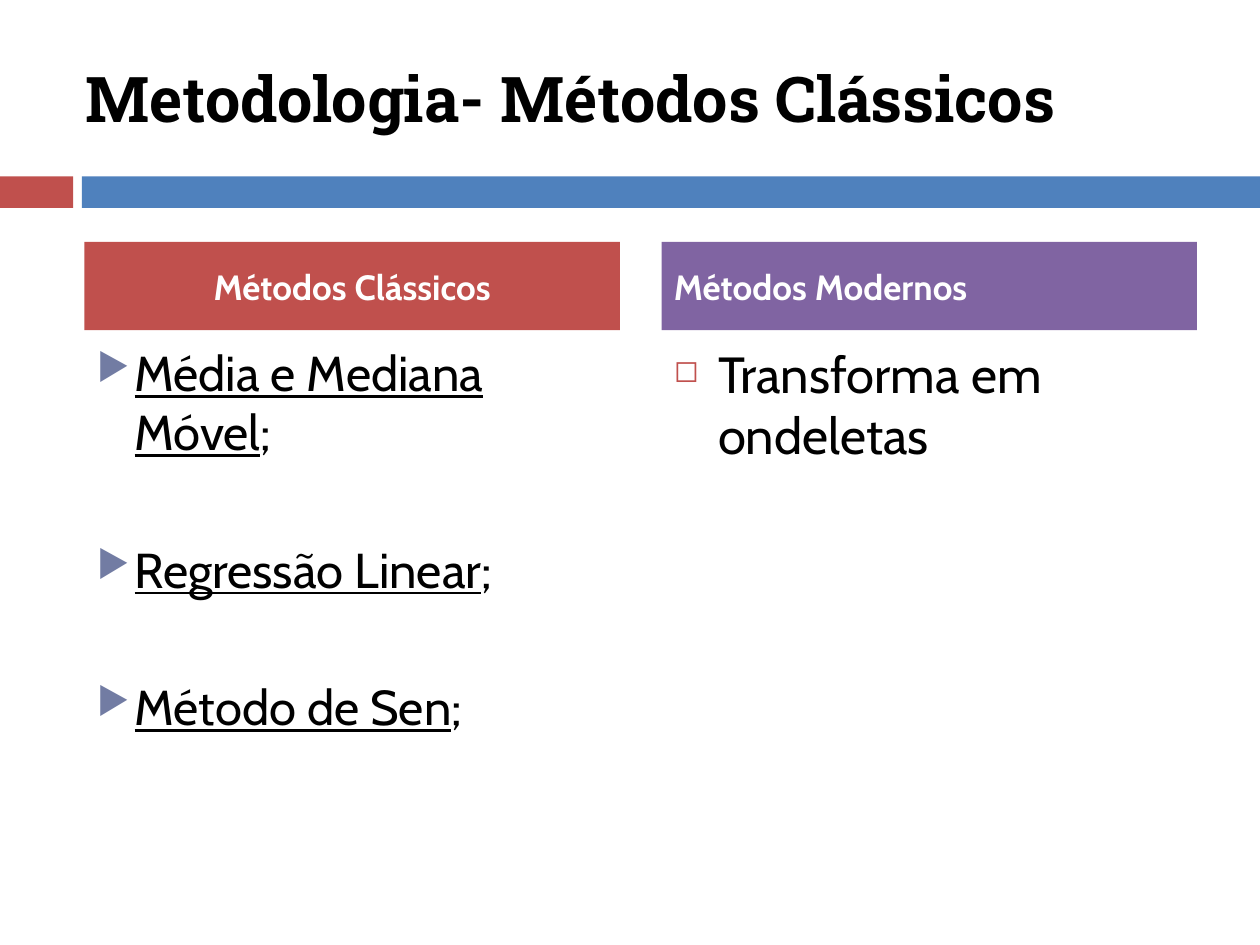
import pptx
import pptx.dml.color
import pptx.enum.shapes
import pptx.enum.text
import pptx.oxml.ns
import pptx.util
from lxml import etree

RGB = pptx.dml.color.RGBColor
RED = RGB(0xC0, 0x50, 0x4D)
BLUE = RGB(0x4F, 0x81, 0xBD)
PURPLE = RGB(0x80, 0x64, 0xA2)
SLATE = RGB(0x72, 0x7C, 0xA3)
BLACK = RGB(0, 0, 0)
WHITE = RGB(0xFF, 0xFF, 0xFF)

HEADING_FONT, BODY_FONT = "Roboto Slab", "Cabin"
ALIGN = pptx.enum.text.PP_ALIGN
MIDDLE = pptx.enum.text.MSO_ANCHOR.MIDDLE

# Grid, in inches
WIDTH, HEIGHT = 10, 7.5
BAND_TOP, BAND_HEIGHT = 1.4, 0.25
COLUMN_LEFT, COLUMN_WIDTH, COLUMN_GAP = 0.67, 4.25, 0.33
HEADER_TOP, HEADER_HEIGHT = 1.92, 0.7
LIST_TOP, LIST_HEIGHT = 2.67, 3.92


def inches(*lengths):
    return [pptx.util.Inches(length) for length in lengths]


def column_left(column):
    return COLUMN_LEFT + column * (COLUMN_WIDTH + COLUMN_GAP)


def style(paragraph, font, size, color, bold=False):
    paragraph.font.name = font
    paragraph.font.size = pptx.util.Pt(size)
    paragraph.font.color.rgb = color
    paragraph.font.bold = bold


def add_block(slide, left, top, width, height, color):
    block = slide.shapes.add_shape(
        pptx.enum.shapes.MSO_SHAPE.RECTANGLE, *inches(left, top, width, height))
    block.shadow.inherit = False
    block.fill.solid()
    block.fill.fore_color.rgb = color
    block.line.fill.background()
    return block


def add_text_frame(slide, left, top, width, height):
    frame = slide.shapes.add_textbox(*inches(left, top, width, height)).text_frame
    frame.word_wrap = True
    return frame


def add_title(slide, text):
    frame = add_text_frame(slide, 0.58, 0.3, 8.92, 0.95)
    frame.vertical_anchor = MIDDLE
    title = frame.paragraphs[0]
    title.text = text
    style(title, HEADING_FONT, 36, BLACK, bold=True)


def add_header(slide, column, text, color, alignment):
    frame = add_block(slide, column_left(column), HEADER_TOP,
                      COLUMN_WIDTH, HEADER_HEIGHT, color).text_frame
    frame.vertical_anchor = MIDDLE
    header = frame.paragraphs[0]
    header.text = text
    header.alignment = alignment
    header.space_before = pptx.util.Pt(7)
    style(header, BODY_FONT, 20, WHITE, bold=True)


def set_bullet(paragraph, symbol, color, percent, indent):
    properties = paragraph._p.get_or_add_pPr()
    properties.set("marL", str(pptx.util.Inches(indent)))
    properties.set("indent", str(-pptx.util.Inches(indent)))
    # Bullet elements go before the default run properties
    parts = [etree.Element(pptx.oxml.ns.qn(tag))
             for tag in ("a:buClr", "a:buSzPct", "a:buChar")]
    etree.SubElement(parts[0], pptx.oxml.ns.qn("a:srgbClr")).set("val", str(color))
    parts[1].set("val", str(percent * 1000))
    parts[2].set("char", symbol)
    for position, part in enumerate(parts):
        properties.insert(position, part)


def add_list(slide, column, items, size, bullet, gap=0):
    """Each item is a list of (text, underlined) runs."""
    frame = add_text_frame(slide, column_left(column), LIST_TOP,
                           COLUMN_WIDTH, LIST_HEIGHT)
    for number, runs in enumerate(items):
        item = frame.add_paragraph() if number else frame.paragraphs[0]
        for text, underlined in runs:
            run = item.add_run()
            run.text = text
            run.font.underline = underlined
        style(item, BODY_FONT, size, BLACK)
        set_bullet(item, *bullet)
        # Spacing goes in last so that it precedes the bullet elements
        item.space_before = pptx.util.Pt(gap if number else 6)


def main():
    presentation = pptx.Presentation()
    presentation.slide_width, presentation.slide_height = inches(WIDTH, HEIGHT)
    slide = presentation.slides.add_slide(presentation.slide_layouts[6])

    # Two-colour band under the title
    add_block(slide, 0, BAND_TOP, 0.58, BAND_HEIGHT, RED)
    add_block(slide, 0.65, BAND_TOP, WIDTH - 0.65, BAND_HEIGHT, BLUE)
    add_title(slide, "Metodologia- Métodos Clássicos")

    # Classic methods
    classic = ["Média e Mediana Móvel", "Regressão Linear", "Método de Sen"]
    add_header(slide, 0, "Métodos Clássicos", RED, ALIGN.CENTER)
    add_list(slide, 0, [[(method, True), (";", False)] for method in classic],
             28, ("▶", SLATE, 76, 0.3), gap=45)

    # Modern methods
    add_header(slide, 1, "Métodos Modernos", PURPLE, ALIGN.LEFT)
    add_list(slide, 1, [[("Transforma em ondeletas", False)]],
             29, ("◻", RED, 60, 0.35))

    presentation.save("out.pptx")


if __name__ == "__main__":
    main()
